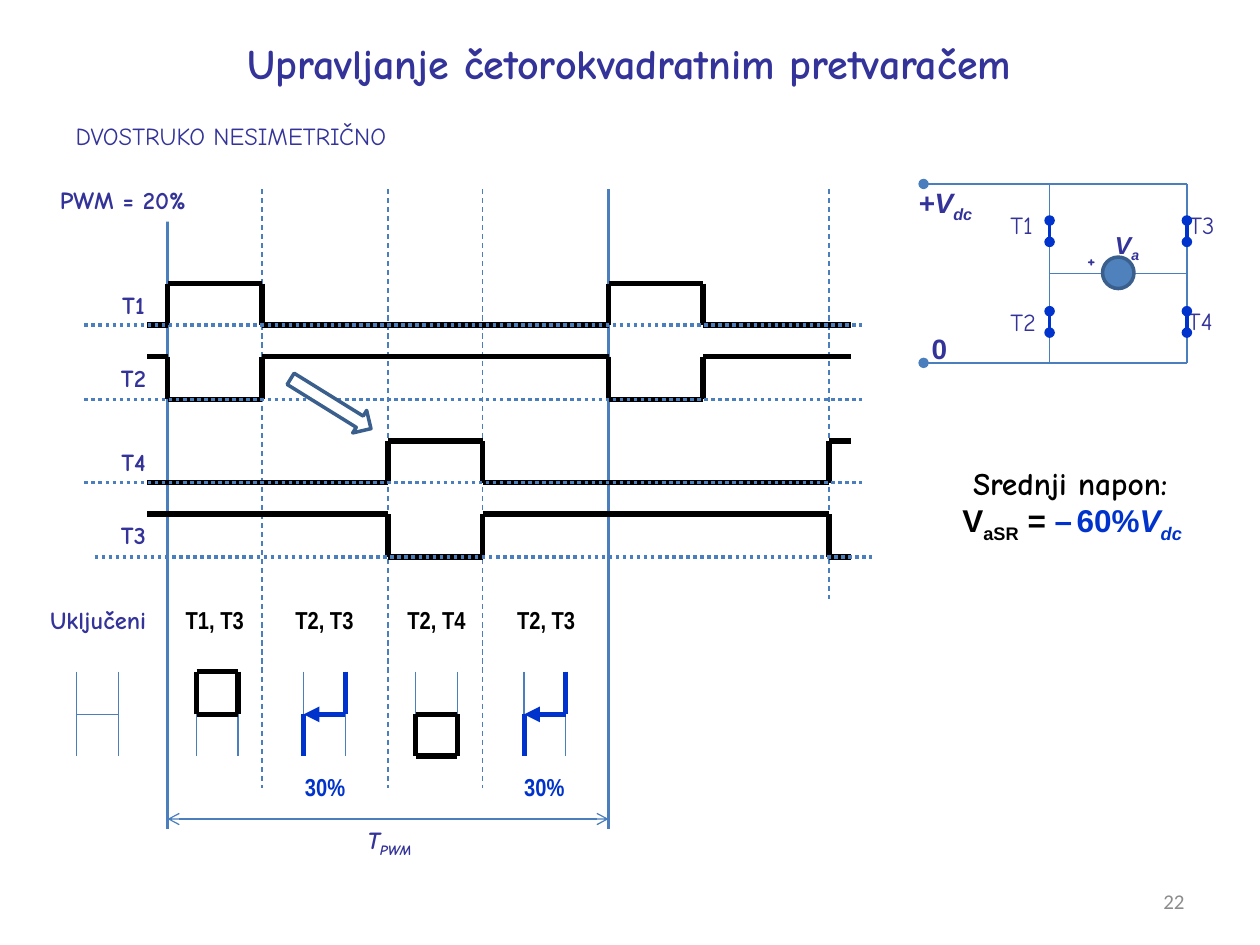
from itertools import pairwise

from lxml import etree
from pptx import Presentation
from pptx.dml.color import RGBColor
from pptx.enum.dml import MSO_LINE
from pptx.enum.shapes import MSO_CONNECTOR, MSO_SHAPE
from pptx.enum.text import MSO_ANCHOR, MSO_AUTO_SIZE, PP_ALIGN
from pptx.oxml.ns import qn
from pptx.util import Emu, Pt

PX = 9144  # 100 px to the inch
COMIC, ARIAL, NARROW = "Comic Neue", "Arial", "Arial Narrow"
INDIGO, THIN, BLUE, BLACK, WHITE = "333399", "4B7EBC", "0033CC", "000000", "FFFFFF"
OUTLINE = "3A5F8C"
SUB = {"sub": True}

# Timing diagram
START, END = 117, 675
DASHED = [(208, 625), (308, 625), (383, 625), (658, 475)]  # x, bottom
PERIOD = (133, 483)
WAVES = [  # name, idle y, active y, switching x, axis y, axis left, label y
    ("T1", 258, 225, (133, 208, 483, 558), 258, 67, 225),
    ("T2", 283, 317, (133, 208, 483, 558), 317, 67, 283),
    ("T4", 383, 350, (308, 383, 658), 383, 67, 350),
    ("T3", 408, 442, (308, 383, 658), 442, 75, 408),
]
AXIS_W = 617

# Bridge states: left x and the conducting path
BRIDGE_W, BRIDGE_TOP, BRIDGE_MID, BRIDGE_BOTTOM = 33, 533, 567, 600
BRIDGES = [(61, None), (156, "upper"), (241, "diagonal"), (330, "lower"), (416, "diagonal")]

# Converter circuit
RAILS, LEGS, RIGHT_LEG = (146, 288), (733, 833), 942
SWITCH_TOPS, SWITCH_H = (175, 247), 17

# Labels: text or list of (text, changes), box, format
LABELS = [
    ("Upravljanje četorokvadratnim pretvaračem", (137, 25, 725, 50), dict(size=24)),
    ("DVOSTRUKO NESIMETRIČNO", (25, 91, 317, 34), dict(bold=False)),
    ("PWM = 20%", (29, 142, 137, 34), dict(fill=WHITE)),
    ([("T", {}), ("PWM ", SUB)], (275, 650, 72, 34), dict(italic=True)),
    ("Uključeni", (25, 475, 106, 34), {}),
    *[(t, (x, 475, 67, 34), dict(font=NARROW, color=BLACK))
      for t, x in (("T1, T3", 137), ("T2, T3", 224), ("T2, T4", 313), ("T2, T3", 400))],
    *[("30%", (x, 608, 52, 34), dict(font=NARROW, color=BLUE)) for x in (232, 406)],
    *[(t, (x, y, 58, 41), dict(size=sz, bold=b, align=PP_ALIGN.LEFT, wrap=True))
      for t, x, y, sz, b in (("T1", 792, 162, 14, False), ("T2", 792, 239, 14, False),
                             ("T3", 934, 162, 14, False), ("T4", 933, 238, 14, False),
                             ("+", 853, 192, 11, True))],
    ([("+V", {}), ("dc ", SUB)], (717, 142, 70, 37), dict(font=ARIAL, size=16, italic=True)),
    ("0", (729, 258, 33, 37), dict(font=ARIAL, size=16)),
    ([("V", {}), ("a", SUB), (" ", {"size": 16})], (872, 175, 45, 34),
     dict(font=ARIAL, italic=True)),
    ("22", (717, 695, 233, 40), dict(font="Calibri", size=12, color="8C8C8C", bold=False,
                                     align=PP_ALIGN.RIGHT, wrap=True, anchor=MSO_ANCHOR.MIDDLE)),
]
MEAN_BOX = (741, 363, 217, 71)
MEAN_VOLTAGE = [
    (" V", {}), ("aSR", SUB), (" = ", {}), ("–", {"color": BLUE}), (" ", {"size": 9}),
    ("60%", {"color": BLUE}), ("V", {"color": BLUE, "italic": True}),
    ("dc ", {"color": BLUE, "italic": True, "sub": True}),
]

prs = Presentation()
prs.slide_width, prs.slide_height = Emu(1000 * PX), Emu(750 * PX)
s = prs.slides.add_slide(prs.slide_layouts[6])


def rgb(color):
    return RGBColor.from_string(color)


def emu(*lengths):
    return [Emu(v * PX) for v in lengths]


def line(x1, y1, x2, y2, color=THIN, width=0.75, dash=None, head=None, tail=None):
    c = s.shapes.add_connector(MSO_CONNECTOR.STRAIGHT, *emu(x1, y1, x2, y2))
    c.line.color.rgb = rgb(color)
    c.line.width = Pt(width)
    if dash:
        c.line.dash_style = dash
    ln = c.line._get_or_add_ln()
    for tag, kind in (("a:headEnd", head), ("a:tailEnd", tail)):
        if kind:
            etree.SubElement(ln, qn(tag), type=kind)
    etree.SubElement(c._element.spPr, qn("a:effectLst"))


def path(points, color=BLACK, width=3):
    for start, end in pairwise(points):
        line(*start, *end, color, width)


def preset(kind, box, fill, rotation=0):
    sp = s.shapes.add_shape(kind, *emu(*box))
    sp.shadow.inherit = False
    sp.fill.solid()
    sp.fill.fore_color.rgb = rgb(fill)
    sp.line.color.rgb = rgb(OUTLINE)
    sp.line.width = Pt(2)
    sp.rotation = rotation


def style(font, name=None, size=None, color=None, bold=None, italic=None):
    font.name, font.bold, font.italic = name, bold, italic
    if size:
        font.size = Pt(size)
    if color:
        font.color.rgb = rgb(color)


def write(p, content, **base):
    """Fill a paragraph with a string or with (text, changes) runs."""
    style(p.font, **base)
    for text, changes in [(content, {})] if isinstance(content, str) else content:
        r = p.add_run()
        r.text = text
        style(r.font, **{k: v for k, v in changes.items() if k != "sub"})
        if changes.get("sub"):
            r._r.get_or_add_rPr().set("baseline", "-25000")


def label(content, box, font=COMIC, size=14, color=INDIGO, bold=True, italic=False,
          align=PP_ALIGN.CENTER, wrap=False, anchor=MSO_ANCHOR.TOP, fill=None):
    sp = s.shapes.add_textbox(*emu(*box))
    if fill:
        sp.fill.solid()
        sp.fill.fore_color.rgb = rgb(fill)
    tf = sp.text_frame
    tf.word_wrap = wrap
    tf.auto_size = MSO_AUTO_SIZE.NONE if wrap else MSO_AUTO_SIZE.SHAPE_TO_FIT_TEXT
    tf.vertical_anchor = anchor
    p = tf.paragraphs[0]
    p.alignment = align
    write(p, content, name=font, size=size, color=color, bold=bold, italic=italic)
    return tf


def wave(idle, active, edges):
    """Draw a signal that toggles between two levels at each edge."""
    points, levels = [(START, idle)], (idle, active)
    for i, x in enumerate(edges):
        points += [(x, levels[i % 2]), (x, levels[(i + 1) % 2])]
    path(points + [(END, levels[len(edges) % 2])])


def bridge(left, conducting):
    right, top, mid, bottom = left + BRIDGE_W, BRIDGE_TOP, BRIDGE_MID, BRIDGE_BOTTOM
    for x in (left, right):
        line(x, top, x, bottom)
    line(left, mid, right, mid)
    if conducting == "diagonal":
        path([(right, top), (right, mid)], BLUE)
        path([(left, mid), (left, bottom)], BLUE)
        line(left, mid, right, mid, BLUE, 3, head="triangle")
    elif conducting:
        y = top if conducting == "upper" else bottom
        path([(left, y), (right, y), (right, mid), (left, mid), (left, y)])


for x, bottom in DASHED:
    line(x, 150, x, bottom, dash=MSO_LINE.DASH)
for x in PERIOD:
    line(x, 150, x, 658, width=1.25)
line(PERIOD[0], 650, PERIOD[1], 650, head="arrow", tail="arrow")

for name, idle, active, edges, axis, axis_left, label_y in WAVES:
    wave(idle, active, edges)
    line(axis_left, axis, axis_left + AXIS_W, axis, width=0, dash=MSO_LINE.ROUND_DOT)
    label(name, (83, label_y, 46, 34))
preset(MSO_SHAPE.RIGHT_ARROW, (225, 310, 75, 21), WHITE, 31.8)

for left, conducting in BRIDGES:
    bridge(left, conducting)

for y in RAILS:
    line(LEGS[0], y, RIGHT_LEG, y, head="oval")
for x in (LEGS[1], RIGHT_LEG):
    line(x, RAILS[0], x, RAILS[1])
line(LEGS[1], 217, RIGHT_LEG, 217)
preset(MSO_SHAPE.OVAL, (875, 204, 25, 25), "4F81BD")

for content, box, fmt in LABELS:
    label(content, box, **fmt)
tf = label("Srednji napon:", MEAN_BOX, size=18, color=BLACK)
p = tf.add_paragraph()
p.alignment = PP_ALIGN.CENTER
write(p, MEAN_VOLTAGE, name=ARIAL, size=18, color=BLACK, bold=True)

for x in (LEGS[1], RIGHT_LEG):
    for y in SWITCH_TOPS:
        line(x, y, x, y + SWITCH_H, BLUE, 2, head="oval", tail="oval")

prs.save("out.pptx")
